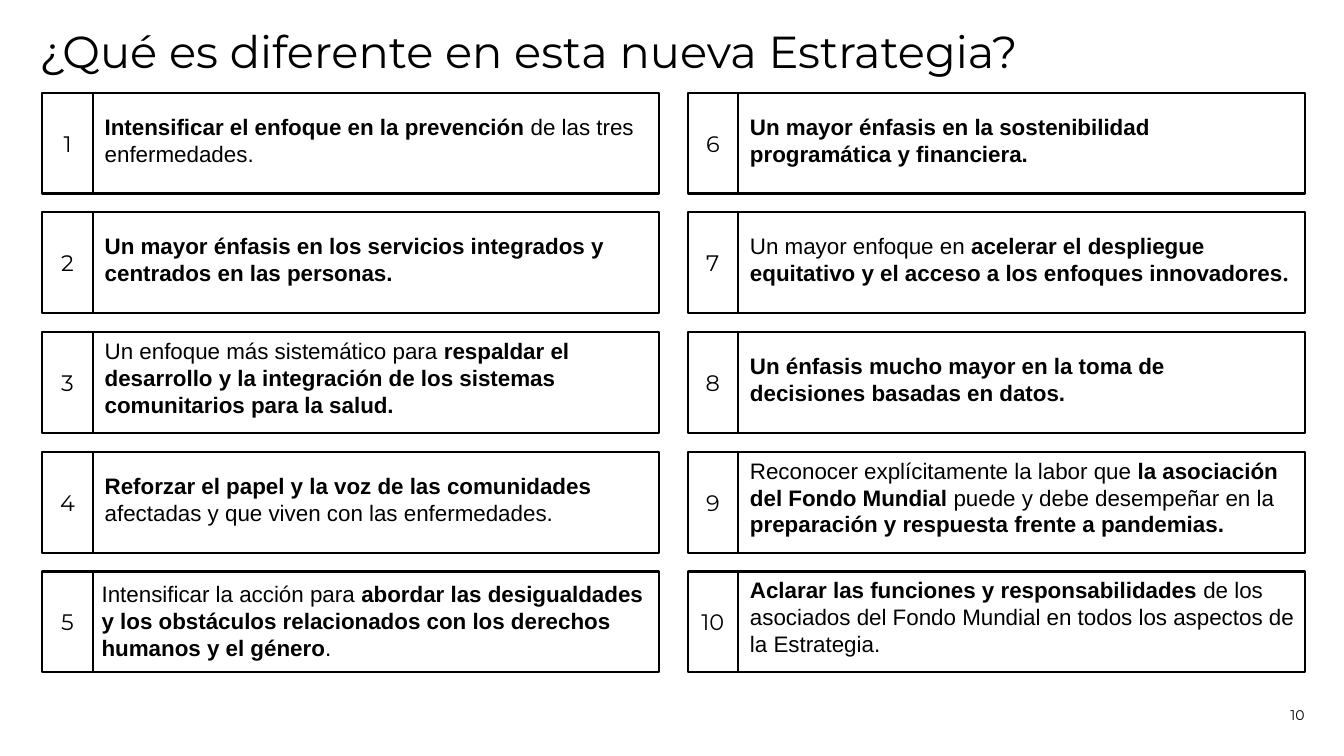
import dataclasses

import pptx
import pptx.dml.color
import pptx.enum.shapes
import pptx.enum.text
import pptx.util

ALIGN = pptx.enum.text.PP_ALIGN
ANCHOR = pptx.enum.text.MSO_ANCHOR
AUTOSIZE = pptx.enum.text.MSO_AUTO_SIZE


@dataclasses.dataclass(frozen=True)
class Theme:
    ink: str = "000000"
    paper: str = "FFFFFF"
    heading: str = "Montserrat"
    body: str = "Arial"
    serif: str = "Times New Roman"
    title_size: int = 32
    text_size: int = 16
    page_size: int = 10
    border: float = 1.5


@dataclasses.dataclass(frozen=True)
class Grid:
    left: float = 0.42
    top: float = 0.92
    column: float = 6.4
    row: float = 4.75 / 4

    def cell(self, column, row):
        return self.left + column * self.column, self.top + row * self.row


class StrategySlide:
    def __init__(self, deck, theme, grid):
        self.theme = theme
        self.grid = grid
        self.slide = deck.slides.add_slide(deck.slide_layouts[5])

    def color(self, value):
        return pptx.dml.color.RGBColor.from_string(value)

    def style(self, target, values):
        for name, value in values.items():
            setattr(target, name, value)

    def box(self, left, top, width, height):
        return [pptx.util.Inches(value) for value in (left, top, width, height)]

    def fill_text(self, frame, runs, size, font, align=ALIGN.LEFT, spacing=1.0, **frame_format):
        self.style(frame, {"word_wrap": True, **frame_format})
        paragraph = frame.paragraphs[0]
        self.style(paragraph, {"alignment": align, "line_spacing": spacing})
        for text, bold, *override in runs:
            run = paragraph.add_run()
            run.text = text
            self.style(run.font, {
                "name": override[0] if override else font,
                "size": pptx.util.Pt(size),
                "bold": bold,
            })
            run.font.color.rgb = self.color(self.theme.ink)

    def flush_margins(self):
        return dict.fromkeys(("margin_left", "margin_top", "margin_right", "margin_bottom"), 0)

    def title(self, text):
        heading = self.slide.shapes.title
        place = self.box(0.39, 0.3, 12.55, 0.51)
        self.style(heading, dict(zip(("left", "top", "width", "height"), place)))
        self.fill_text(heading.text_frame, [(text, False)], self.theme.title_size,
                       self.theme.heading, spacing=0.9, vertical_anchor=ANCHOR.TOP,
                       auto_size=AUTOSIZE.NONE, **self.flush_margins())

    def page_number(self, number):
        footer = self.slide.shapes.add_textbox(*self.box(11.96, 6.78, 0.98, 0.4))
        self.fill_text(footer.text_frame, [(number, False)], self.theme.page_size,
                       self.theme.heading, ALIGN.RIGHT, vertical_anchor=ANCHOR.BOTTOM,
                       **self.flush_margins())

    def rectangle(self, shapes, place, fill=None):
        outline = shapes.add_shape(pptx.enum.shapes.MSO_SHAPE.RECTANGLE, *self.box(*place))
        outline.shadow.inherit = False
        if fill:
            outline.fill.solid()
            outline.fill.fore_color.rgb = self.color(fill)
        else:
            outline.fill.background()
        outline.line.color.rgb = self.color(self.theme.ink)
        outline.line.width = pptx.util.Pt(self.theme.border)
        return outline

    def card(self, index, runs, lines=2, width=5.6, nudge=(0, 0)):
        left, top = self.grid.cell(*divmod(index, 5))
        shapes = self.slide.shapes.add_group_shape().shapes
        self.rectangle(shapes, (left + 0.17, top, 5.95, 1))
        number = self.rectangle(shapes, (left, top, 0.5, 1), self.theme.paper)
        self.fill_text(number.text_frame, [(str(index + 1), False)], self.theme.text_size,
                       self.theme.heading, ALIGN.CENTER, vertical_anchor=ANCHOR.MIDDLE)
        drop = 0.15 if lines == 2 else 0
        height = 0.1 + 0.27 * lines
        message = shapes.add_textbox(*self.box(
            left + 0.52 + nudge[0], top + drop + nudge[1], width, height))
        self.fill_text(message.text_frame, runs, self.theme.text_size, self.theme.body,
                       vertical_anchor=ANCHOR.TOP, auto_size=AUTOSIZE.SHAPE_TO_FIT_TEXT)


THEME = Theme()

CHANGES = [
    dict(runs=[("Intensificar el enfoque en la prevención", True),
               (" de las tres enfermedades.", False)]),
    dict(runs=[("Un mayor énfasis en los servicios integrados y centrados en las personas.", True)]),
    dict(runs=[("Un enfoque más sistemático para ", False),
               ("respaldar el desarrollo y la integración de los sistemas "
                "comunitarios para la salud.", True)], lines=3),
    dict(runs=[("Reforzar el papel y la voz de las comunidades", True),
               (" afectadas y que viven con las enfermedades.", False)]),
    dict(runs=[("Intensificar la acción para ", False),
               ("abordar las desigualdades y los obstáculos relacionados con los "
                "derechos humanos y el género", True),
               (".", False)], lines=3, nudge=(-0.03, 0.04)),
    dict(runs=[("Un mayor énfasis en la sostenibilidad programática y financiera.", True)]),
    dict(runs=[("Un mayor enfoque en ", False),
               ("acelerar el despliegue equitativo y el acceso a los enfoques innovadores", True),
               (".", True, THEME.serif)]),
    dict(runs=[("Un énfasis mucho mayor en la toma de decisiones basadas en datos.", True)],
         width=5.14),
    dict(runs=[("Reconocer explícitamente la labor que ", False),
               ("la asociación del Fondo Mundial", True),
               (" puede y debe desempeñar en la ", False),
               ("preparación y respuesta frente a pandemias.", True)], lines=3),
    dict(runs=[("Aclarar las funciones y responsabilidades", True),
               (" de los asociados del Fondo Mundial en todos los aspectos de la Estrategia.",
                False)], lines=3),
]


def main():
    deck = pptx.Presentation()
    deck.slide_width = pptx.util.Inches(13.33)
    deck.slide_height = pptx.util.Inches(7.5)
    strategy = StrategySlide(deck, THEME, Grid())
    strategy.title("¿Qué es diferente en esta nueva Estrategia?")
    for index, change in enumerate(CHANGES):
        strategy.card(index, **change)
    strategy.page_number("10")
    deck.save("out.pptx")


if __name__ == "__main__":
    main()
